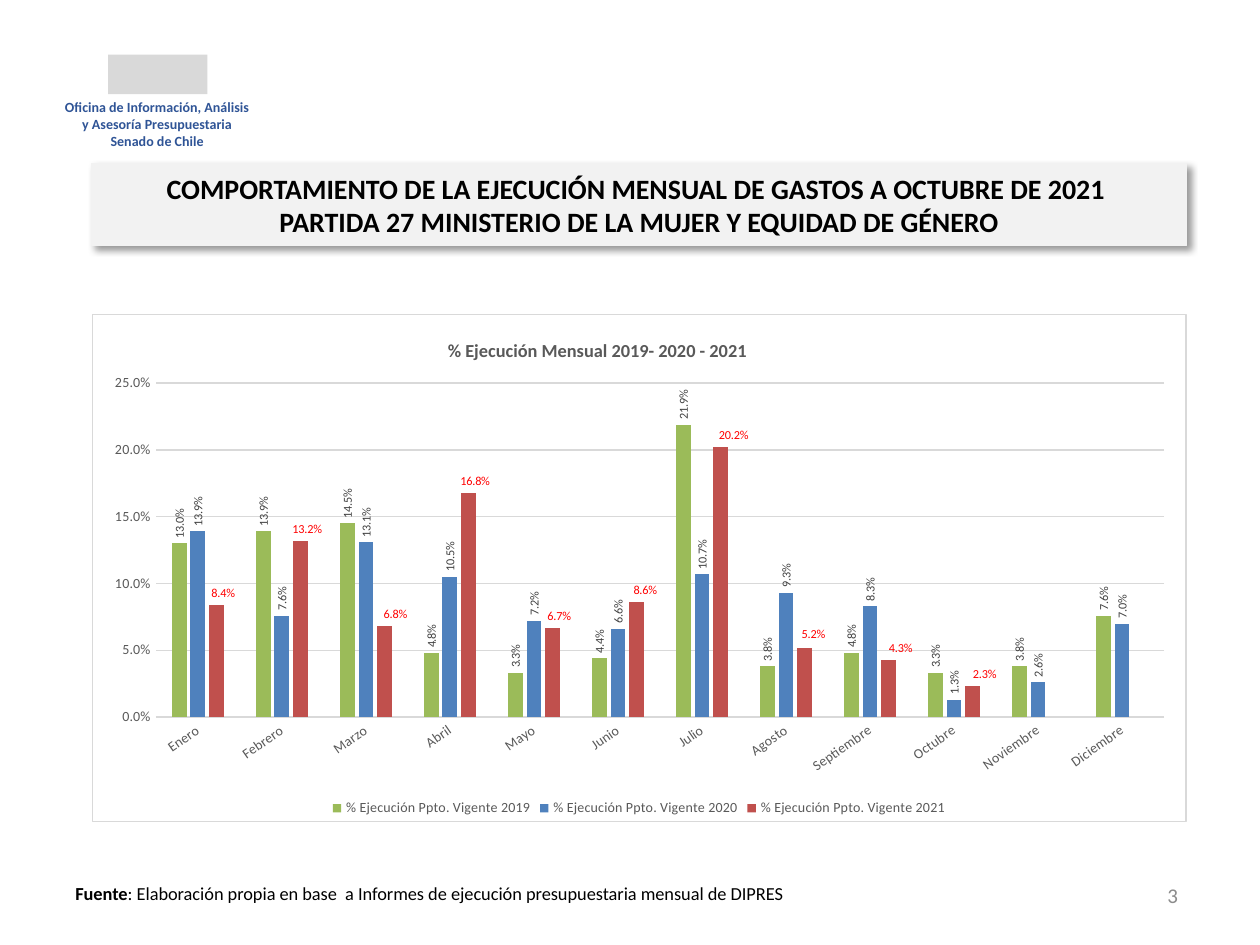
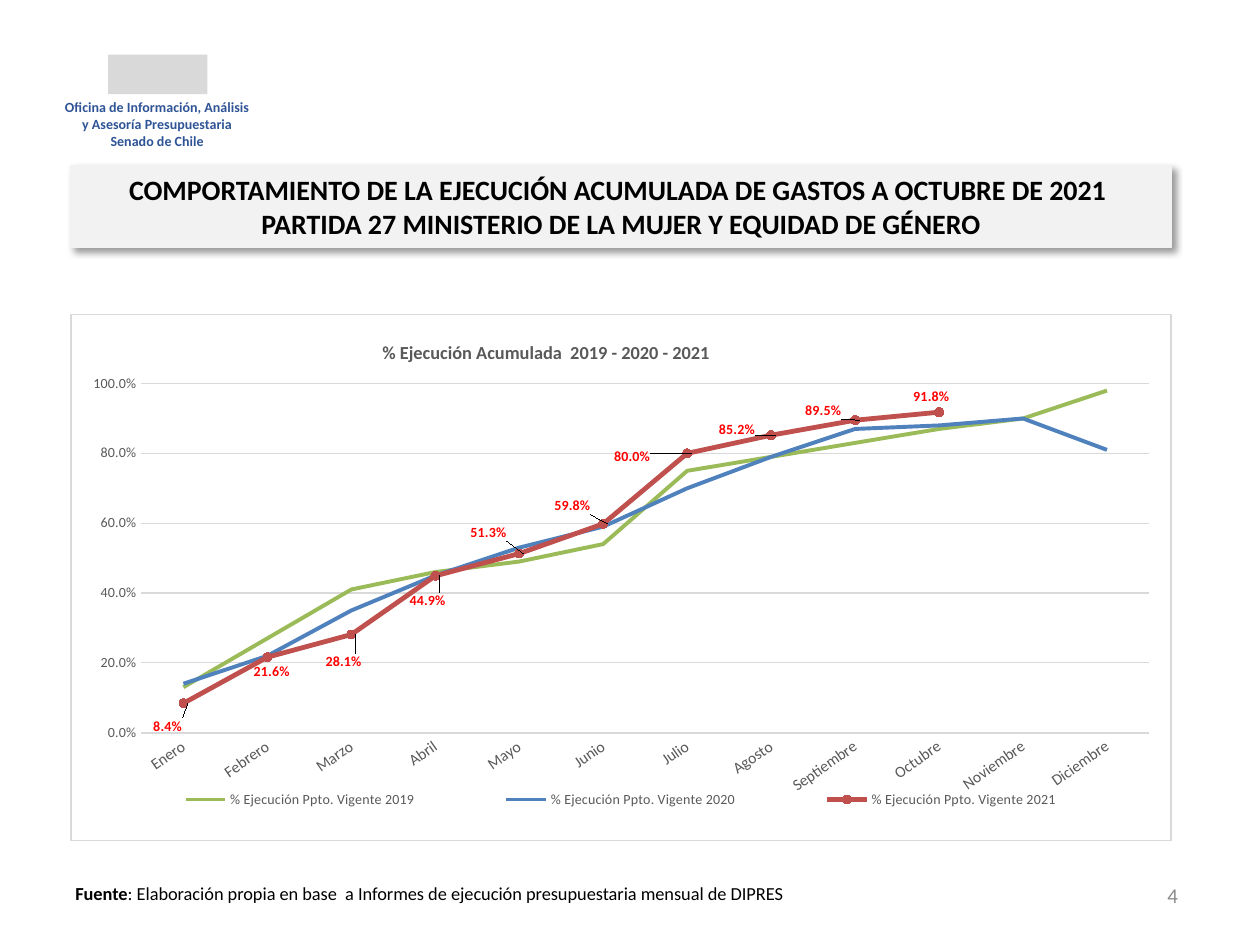
"""Build the two slides on monthly and accumulated spending of Partida 27."""
from pptx import Presentation
from pptx import util as u
from pptx.chart.data import CategoryChartData
from pptx.dml.color import RGBColor
from pptx.enum import chart as ch, shapes, text
from pptx.oxml import parse_xml
from pptx.oxml.ns import nsdecls, qn

FONT = "Calibri"
NAVY, BLACK, WHITE, BAND = "2F5496", "000000", "FFFFFF", "F2F2F2"
GREY, LABEL_GREY, PAGE_GREY, RULE, RED = "595959", "404040", "8C8C8C", "D9D9D9", "FF0000"
YEAR_COLOURS = {"2019": "9BBB59", "2020": "4F81BD", "2021": "C0504D"}
MONTHS = ["Enero", "Febrero", "Marzo", "Abril", "Mayo", "Junio", "Julio", "Agosto",
          "Septiembre", "Octubre", "Noviembre", "Diciembre"]
PERCENT = "0.0%"


def style(font, size, colour, bold=False):
    font.size, font.bold, font.name = u.Pt(size), bold, FONT
    font.color.rgb = RGBColor.from_string(colour)


def place(parent, index, box, inner=False):
    """Give a chart part a manual layout, in percent of the chart."""
    for old in parent.findall(qn("c:layout")):
        parent.remove(old)
    target = '<c:layoutTarget val="inner"/>' if inner else ""
    modes = '<c:xMode val="edge"/><c:yMode val="edge"/>' if parent.tag != qn("c:dLbl") else ""
    sizes = "".join(f'<c:{key} val="{value / 100:.4f}"/>' for key, value in zip("xywh", box))
    parent.insert(index, parse_xml(
        f'<c:layout {nsdecls("c")}><c:manualLayout>{target}{modes}{sizes}'
        '</c:manualLayout></c:layout>'))


pages = [
    dict(
        number=3, heading="MENSUAL", band=(1.85, 3.3, 22.07, 1.65),
        chart_box=(1.85, 6.32, 22.07, 10.26), kind=ch.XL_CHART_TYPE.COLUMN_CLUSTERED,
        chart_title="% Ejecución Mensual 2019- 2020 - 2021", title_at=(32.2, 4.1),
        plot_box=(5.8, 13.6, 92.2, 65.8), legend_box=None,
        top=0.25, step=0.05, month_size=8, axis_width=0.75,
        label_shifts=[(0.6, 0), (0.6, 0), (1, 0), (0.6, 0), (0.6, 0),
                      (0.8, 0), (1.2, 0), (0.8, -0.3), (1.1, 0), (1.1, 0)],
        values={
            "2019": [0.13, 0.139, 0.145, 0.048, 0.033, 0.044,
                     0.219, 0.038, 0.048, 0.033, 0.038, 0.076],
            "2020": [0.139, 0.076, 0.131, 0.105, 0.072, 0.066,
                     0.107, 0.093, 0.083, 0.013, 0.026, 0.07],
            "2021": [0.084, 0.132, 0.068, 0.168, 0.067, 0.086, 0.202, 0.052, 0.043, 0.023],
        }),
    dict(
        number=4, heading="ACUMULADA", band=(1.42, 3.33, 22.2, 1.65),
        chart_box=(1.42, 6.32, 22.2, 10.64), kind=ch.XL_CHART_TYPE.LINE_MARKERS,
        chart_title="% Ejecución Acumulada  2019 - 2020 - 2021", title_at=(28, 4.4),
        plot_box=(6.4, 13.2, 91.6, 66.3), legend_box=(2.5, 89.2, 95, 6),
        top=1, step=0.2, month_size=9, axis_width=1,
        label_shifts=[(-3.6, 4.4), (-2.1, 2.7), (-3.2, 5.3), (-3.2, 4.7), (-5.3, -4),
                      (-5.3, -3.4), (-7.5, 0.7), (-5.6, -1), (-5.4, -1.8), (-3.2, -3)],
        values={
            "2019": [0.13, 0.27, 0.41, 0.46, 0.49, 0.54, 0.75, 0.79, 0.83, 0.87, 0.9, 0.98],
            "2020": [0.14, 0.22, 0.35, 0.45, 0.53, 0.59, 0.7, 0.79, 0.87, 0.88, 0.9, 0.81],
            "2021": [0.084, 0.216, 0.281, 0.449, 0.513, 0.598, 0.8, 0.852, 0.895, 0.918],
        }),
]

prs = Presentation()
prs.slide_width, prs.slide_height = u.Cm(25.4), u.Cm(19.05)

for page in pages:
    slide = prs.slides.add_slide(prs.slide_layouts[5])

    emblem = slide.shapes.add_shape(shapes.MSO_SHAPE.RECTANGLE,
                                    u.Cm(2.18), u.Cm(1.1), u.Cm(2), u.Cm(0.8))
    emblem.shadow.inherit = False
    emblem.fill.solid()
    emblem.fill.fore_color.rgb = RGBColor.from_string(RULE)
    emblem.line.fill.background()

    office = slide.shapes.add_textbox(u.Cm(1), u.Cm(1.87), u.Cm(4.34), u.Cm(1.25))
    office.text_frame.word_wrap = True
    office.text_frame.text = ("Oficina de Información, Análisis y Asesoría Presupuestaria"
                              "\nSenado de Chile")
    for line in office.text_frame.paragraphs:
        line.alignment = text.PP_ALIGN.CENTER
        style(line.runs[0].font, 8, NAVY, True)

    source = slide.shapes.add_textbox(u.Cm(1.27), u.Cm(17.65), u.Cm(15.01), u.Cm(0.71))
    source.text_frame.word_wrap = True
    for words, bold in [
            ("Fuente", True),
            (": Elaboración propia en base  a Informes de ejecución presupuestaria "
             "mensual de DIPRES", False)]:
        run = source.text_frame.paragraphs[0].add_run()
        run.text = words
        style(run.font, 10.5, BLACK, bold)

    folio = slide.shapes.add_textbox(u.Cm(18.08), u.Cm(17.53), u.Cm(5.92), u.Cm(1.02))
    folio.text_frame.vertical_anchor = text.MSO_ANCHOR.MIDDLE
    folio.text_frame.word_wrap = True
    folio.text_frame.text = str(page["number"])
    folio.text_frame.paragraphs[0].alignment = text.PP_ALIGN.RIGHT
    style(folio.text_frame.paragraphs[0].runs[0].font, 12, PAGE_GREY)

    heading = slide.shapes.title
    heading.left, heading.top, heading.width, heading.height = map(u.Cm, page["band"])
    heading.fill.solid()
    heading.fill.fore_color.rgb = RGBColor.from_string(BAND)
    heading.line.color.rgb = RGBColor.from_string(BAND)
    heading.line.width = u.Pt(0.75)
    heading.element.spPr.append(parse_xml(
        f'<a:effectLst {nsdecls("a")}><a:outerShdw blurRad="50800" dist="38100" dir="2700000" '
        f'algn="tl" rotWithShape="0"><a:srgbClr val="{BLACK}"><a:alpha val="40000"/>'
        '</a:srgbClr></a:outerShdw></a:effectLst>'))
    frame = heading.text_frame
    frame.text = (f"COMPORTAMIENTO DE LA EJECUCIÓN {page['heading']} DE GASTOS A OCTUBRE DE 2021 "
                  "\vPARTIDA 27 MINISTERIO DE LA MUJER Y EQUIDAD DE GÉNERO")
    frame.auto_size = text.MSO_AUTO_SIZE.NONE
    frame.vertical_anchor = text.MSO_ANCHOR.MIDDLE
    frame.paragraphs[0].alignment = text.PP_ALIGN.CENTER
    for run in frame.paragraphs[0].runs:
        style(run.font, 16, BLACK, True)

    data = CategoryChartData(number_format=PERCENT)
    data.categories = MONTHS
    for year, values in page["values"].items():
        data.add_series(f"% Ejecución Ppto. Vigente {year}", values)
    chart = slide.shapes.add_chart(page["kind"], *map(u.Cm, page["chart_box"]), data).chart
    style(chart.font, 10, BLACK)
    space = chart.element
    if space.find(qn("c:roundedCorners")) is None:
        space.find(qn("c:date1904")).addnext(
            parse_xml(f'<c:roundedCorners {nsdecls("c")} val="0"/>'))
    space.find(qn("c:chart")).addnext(parse_xml(
        f'<c:spPr {nsdecls("c", "a")}><a:solidFill><a:srgbClr val="{WHITE}"/></a:solidFill>'
        f'<a:ln w="9525"><a:solidFill><a:srgbClr val="{RULE}"/></a:solidFill></a:ln></c:spPr>'))

    chart.has_title = True
    chart.chart_title.text_frame.text = page["chart_title"]
    style(chart.chart_title.text_frame.paragraphs[0].runs[0].font, 10.5, GREY, True)
    place(next(space.iter(qn("c:title"))), 1, page["title_at"])
    place(next(space.iter(qn("c:plotArea"))), 0, page["plot_box"], inner=True)

    chart.has_legend = True
    chart.legend.position = ch.XL_LEGEND_POSITION.BOTTOM
    chart.legend.include_in_layout = False
    style(chart.legend.font, 8, GREY)
    if page["legend_box"]:
        place(next(space.iter(qn("c:legend"))), 1, page["legend_box"])

    months, scale = chart.category_axis, chart.value_axis
    for axis, size in ((months, page["month_size"]), (scale, 8)):
        axis.major_tick_mark = axis.minor_tick_mark = ch.XL_TICK_MARK.NONE
        style(axis.tick_labels.font, size, GREY)
    months.format.line.color.rgb = RGBColor.from_string(RULE)
    months.format.line.width = u.Pt(page["axis_width"])
    next(next(space.iter(qn("c:catAx"))).iter(qn("a:bodyPr"))).set("rot", "-2100000")
    scale.format.line.fill.background()
    scale.minimum_scale, scale.maximum_scale = 0, page["top"]
    scale.major_unit = page["step"]
    scale.tick_labels.number_format = PERCENT
    scale.tick_labels.number_format_is_linked = False
    scale.major_gridlines.format.line.color.rgb = RGBColor.from_string(RULE)
    scale.major_gridlines.format.line.width = u.Pt(0.75)

    plot = chart.plots[0]
    plot.vary_by_categories = False
    columns = page["kind"] == ch.XL_CHART_TYPE.COLUMN_CLUSTERED
    if columns:
        plot.gap_width, plot.overlap = 219, -27
    side = ch.XL_LABEL_POSITION.OUTSIDE_END if columns else ch.XL_LABEL_POSITION.RIGHT
    label_size = 7 if columns else 8

    for (year, hue), series in zip(YEAR_COLOURS.items(), plot.series):
        current = year == "2021"
        colour = RGBColor.from_string(hue)
        if columns:
            series.format.fill.solid()
            series.format.fill.fore_color.rgb = colour
        else:
            series.smooth = False
            series.format.line.color.rgb = colour
            series.format.line.width = u.Pt(2.75 if current else 2.25)
            series.marker.style = ch.XL_MARKER_STYLE.NONE
            if current:
                series.marker.style, series.marker.size = ch.XL_MARKER_STYLE.CIRCLE, 5
                series.marker.format.fill.solid()
                series.marker.format.fill.fore_color.rgb = colour
                series.marker.format.line.color.rgb = colour
        if columns or current:
            labels = series.data_labels
            labels.show_value, labels.position = True, side
            labels.number_format, labels.number_format_is_linked = PERCENT, False
            style(labels.font, label_size, RED if current else LABEL_GREY, not columns)
        if current:
            for month in range(len(page["label_shifts"])):
                label = series.points[month].data_label
                style(label.font, label_size, RED, not columns)
                label.position = side

    for label, shift in zip(space.iter(qn("c:dLbl")), page["label_shifts"]):
        label.insert(1, parse_xml(
            f'<c:numFmt {nsdecls("c")} formatCode="{PERCENT}" sourceLinked="0"/>'))
        place(label, 1, shift)
    label_groups = list(space.iter(qn("c:dLbls")))
    label_groups[-1].append(parse_xml(
        f'<c:extLst {nsdecls("c")}><c:ext uri="{{CE6537A1-D6FC-4f65-9D91-7224C49458BB}}" '
        'xmlns:c15="http://schemas.microsoft.com/office/drawing/2012/chart">'
        '<c15:showLeaderLines val="0"/></c:ext></c:extLst>'))
    for labels in label_groups[:-1]:
        upright = next(labels.iter(qn("a:bodyPr")))
        upright.set("rot", "-5400000")
        upright.set("vert", "horz")

prs.save("out.pptx")
